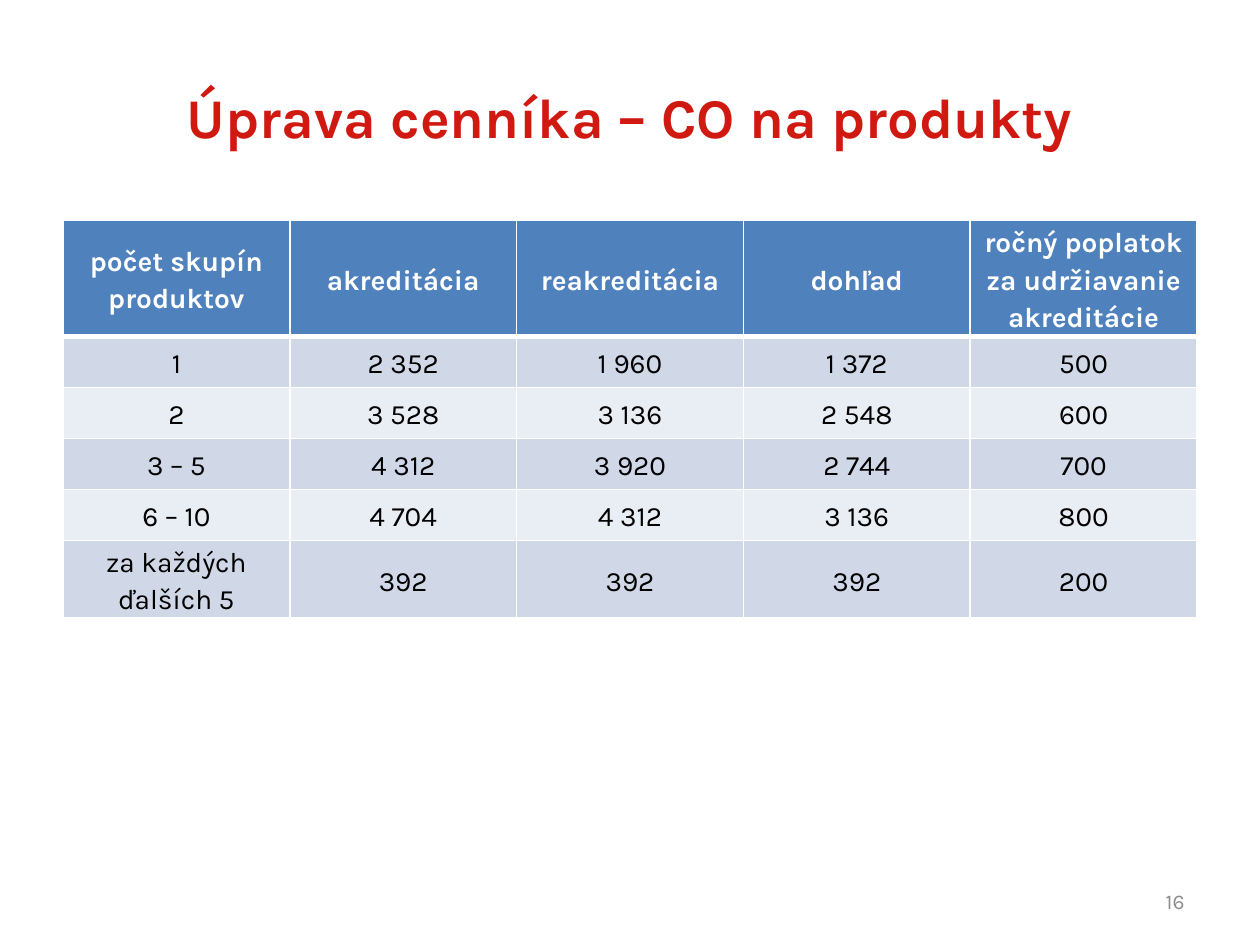
from dataclasses import dataclass

from lxml import etree
from pptx import Presentation
from pptx import util as u
from pptx.dml.color import RGBColor
from pptx.enum import text
from pptx.oxml import ns

Pt = u.Pt


@dataclass(frozen=True)
class Theme:
    font: str = "Karla"
    red: str = "D01910"
    blue: str = "4F81BD"
    bands: tuple = ("D0D8E8", "E9EDF4")
    white: str = "FFFFFF"
    black: str = "000000"
    gray: str = "8C8C8C"
    title: int = 32
    body: int = 16
    small: int = 12


THEME = Theme()

HEAD = ["počet skupín produktov", "akreditácia", "reakreditácia", "dohľad",
        "ročný poplatok za udržiavanie akreditácie"]
RATES = [
    ["1", "2 352", "1 960", "1 372", "500"],
    ["2", "3 528", "3 136", "2 548", "600"],
    ["3 – 5", "4 312", "3 920", "2 744", "700"],
    ["6 – 10", "4 704", "4 312", "3 136", "800"],
    ["za každých ďalších 5", "392", "392", "392", "200"],
]
ROWS = [64, 29.2, 29.2, 29.2, 29.2, 42.6]
WIDTH = 648


def style(para, size, color, align, bold=False):
    para.alignment = align
    font = para.font
    font.name, font.size, font.bold = THEME.font, Pt(size), bold
    font.color.rgb = RGBColor.from_string(color)


def label(slide, words, box, size, color, align, bold=False):
    frame = slide.shapes.add_textbox(*map(Pt, box)).text_frame
    frame.word_wrap = True
    frame.vertical_anchor = text.MSO_ANCHOR.MIDDLE
    frame.text = words
    style(frame.paragraphs[0], size, color, align, bold)


def edge(cell, side, width):
    props = cell._tc.get_or_add_tcPr()
    line = etree.SubElement(props, ns.qn(f"a:ln{side}"), w=str(Pt(width)))
    fill = etree.SubElement(line, ns.qn("a:solidFill"))
    etree.SubElement(fill, ns.qn("a:srgbClr"), val=THEME.white)


def fill_cell(cell, words, row):
    head = row == 0
    # Borders go before the fill; the rule under the header is thicker
    for side in "LRTB":
        thick = (row, side) in ((0, "B"), (1, "T"))
        edge(cell, side, 3 if thick else 1)
    cell.fill.solid()
    back = THEME.blue if head else THEME.bands[(row - 1) % 2]
    cell.fill.fore_color.rgb = RGBColor.from_string(back)
    cell.vertical_anchor = text.MSO_ANCHOR.MIDDLE
    cell.margin_left = cell.margin_right = Pt(5)
    cell.margin_top = cell.margin_bottom = 0
    cell.text = words
    para = cell.text_frame.paragraphs[0]
    para.line_spacing = 1.15
    para.space_after = Pt(10)
    style(para, THEME.body, THEME.white if head else THEME.black,
          text.PP_ALIGN.CENTER, head)


def price_table(slide):
    data = [HEAD] + RATES
    grid = slide.shapes.add_table(len(data), len(HEAD), Pt(36), Pt(126),
                                  Pt(WIDTH), Pt(sum(ROWS))).table
    for col in grid.columns:
        col.width = Pt(WIDTH / len(HEAD))
    for row, (high, words) in enumerate(zip(ROWS, data)):
        grid.rows[row].height = Pt(high)
        for col, word in enumerate(words):
            fill_cell(grid.cell(row, col), word, row)


def main():
    deck = Presentation()
    deck.slide_width, deck.slide_height = Pt(720), Pt(540)
    slide = deck.slides.add_slide(deck.slide_layouts[6])

    # Title
    label(slide, "Úprava cenníka – CO na produkty", (36, 21.6, 648, 90),
          THEME.title, THEME.red, text.PP_ALIGN.CENTER, True)

    # Price list
    price_table(slide)

    # Page number
    label(slide, "16", (516, 500.5, 168, 28.75),
          THEME.small, THEME.gray, text.PP_ALIGN.RIGHT)

    deck.save("out.pptx")


if __name__ == "__main__":
    main()
